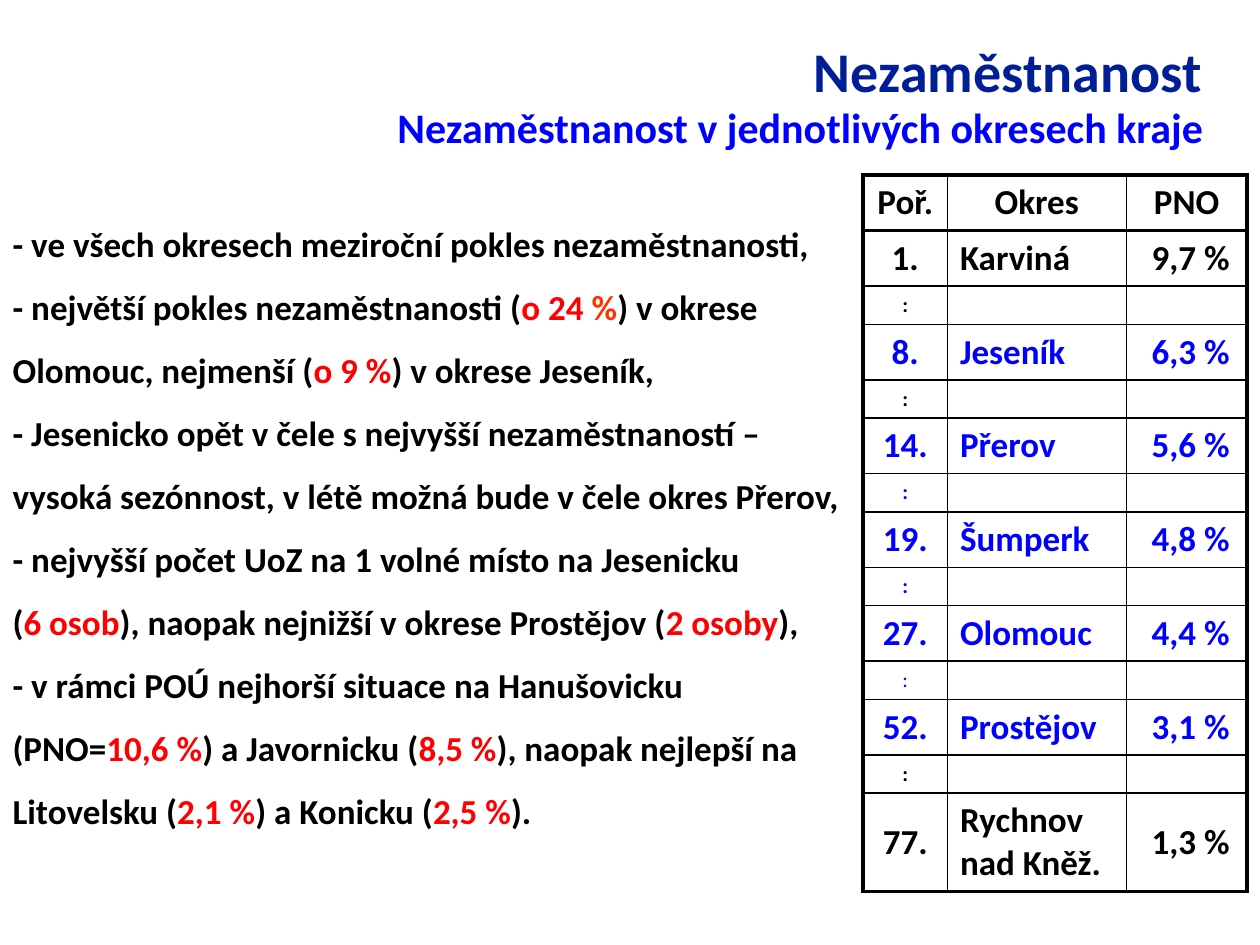
"""Build the slide on unemployment by district."""
import dataclasses

import lxml.etree
import pptx
import pptx.dml.color
import pptx.enum.text
import pptx.oxml.ns
import pptx.util

Pt = pptx.util.Pt
Align = pptx.enum.text.PP_ALIGN
Anchor = pptx.enum.text.MSO_ANCHOR


@dataclasses.dataclass(frozen=True)
class Theme:
    font: str = "Calibri"
    navy: str = "001E96"
    blue: str = "0000FF"
    black: str = "000000"
    red: str = "FF0000"
    warm: str = "FF3300"
    title: int = 32
    lead: int = 24
    body: int = 20
    small: int = 12
    thick: float = 2.25
    thin: float = 1


THEME = Theme()
RED = THEME.red

POINTS = [
    ["- ve všech okresech meziroční pokles nezaměstnanosti,"],
    ["- největší pokles nezaměstnanosti (", ("o 24", RED), (" %", THEME.warm),
     ") v okrese Olomouc, nejmenší (", ("o 9 %", RED), ") v okrese Jeseník,"],
    ["- Jesenicko opět v čele s nejvyšší nezaměstnaností – vysoká sezónnost, "
     "v létě možná bude v čele okres Přerov,"],
    ["- nejvyšší počet UoZ na 1 volné místo na Jesenicku\v(", ("6 osob", RED),
     "), naopak nejnižší v okrese Prostějov (", ("2 osoby", RED), "),"],
    ["- v rámci POÚ nejhorší situace na Hanušovicku (PNO=", ("10,6 %", RED),
     ") a Javornicku (", ("8,5 %", RED), "), naopak nejlepší na Litovelsku (",
     ("2,1 %", RED), ") a Konicku (", ("2,5 %", RED), ")."],
]

GAP = (":", "", "")
ROWS = [
    (("Poř.", "Okres", "PNO"), THEME.black),
    (("1.", "Karviná", " 9,7 %"), THEME.black),
    (GAP, THEME.black),
    (("8.", "Jeseník", " 6,3 %"), THEME.blue),
    (GAP, THEME.black),
    (("14.", "Přerov", " 5,6 %"), THEME.blue),
    (GAP, THEME.blue),
    (("19.", "Šumperk", " 4,8 %"), THEME.blue),
    (GAP, THEME.blue),
    (("27.", "Olomouc", " 4,4 %"), THEME.blue),
    (GAP, THEME.blue),
    (("52.", "Prostějov", " 3,1 %"), THEME.blue),
    (GAP, THEME.black),
    (("77.", "Rychnov\nnad Kněž.", " 1,3 %"), THEME.black),
]
LIGHT = 10
WIDTHS = (48.2, 102.2, 69.1)


def write(frame, text, size=THEME.body, color=THEME.black, bold=True,
          align=Align.LEFT, space=1.0):
    """Fill a text frame with a string or with lists of coloured runs."""
    paras = [[line] for line in text.split("\n")] if isinstance(text, str) else text
    for i, parts in enumerate(paras):
        para = frame.paragraphs[0] if i == 0 else frame.add_paragraph()
        para.alignment = align
        para.line_spacing = space
        para.space_before = Pt(0)
        for part in parts:
            words, tint = (part, color) if isinstance(part, str) else part
            for j, piece in enumerate(words.split("\v")):
                if j:
                    para.add_line_break()
                if piece:
                    run = para.add_run()
                    run.text = piece
                    style(run.font, size, tint, bold)
        if not any(parts):
            para._p.get_or_add_endParaRPr().set("sz", str(size * 100))


def style(font, size, color, bold):
    """Set the face, size, colour and weight of a font."""
    font.name = THEME.font
    font.size = Pt(size)
    font.bold = bold
    font.color.rgb = pptx.dml.color.RGBColor.from_string(color)


def place(shape, left, top, width, height):
    """Move a text shape and give it a plain frame."""
    shape.left, shape.top = Pt(left), Pt(top)
    shape.width, shape.height = Pt(width), Pt(height)
    frame = shape.text_frame
    frame.word_wrap = True
    frame.auto_size = pptx.enum.text.MSO_AUTO_SIZE.NONE
    frame.vertical_anchor = Anchor.TOP
    return frame


def plain(frame):
    """Take bullets and indents off all paragraphs."""
    for para in frame.paragraphs:
        props = para._p.get_or_add_pPr()
        props.set("marL", "0")
        props.set("indent", "0")
        lxml.etree.SubElement(props, pptx.oxml.ns.qn("a:buNone"))


def edge(cell, sides):
    """Draw the borders of a cell from a map of side to line width."""
    props = cell._tc.get_or_add_tcPr()
    for side, width in sides.items():
        line = lxml.etree.SubElement(
            props, pptx.oxml.ns.qn(f"a:ln{side}"), w=str(Pt(width)))
        fill = lxml.etree.SubElement(line, pptx.oxml.ns.qn("a:solidFill"))
        lxml.etree.SubElement(fill, pptx.oxml.ns.qn("a:srgbClr"), val=THEME.black)


def rank(slide):
    """Add the table of ranked districts."""
    last, end = len(ROWS) - 1, len(WIDTHS) - 1
    grid = slide.shapes.add_table(
        len(ROWS), len(WIDTHS), Pt(493.2), Pt(100), Pt(sum(WIDTHS)), Pt(403)).table
    grid.first_row = grid.horz_banding = False
    for col, width in zip(grid.columns, WIDTHS):
        col.width = Pt(width)
    for r, (words, color) in enumerate(ROWS):
        gap = words == GAP
        grid.rows[r].height = Pt(55.4 if r == last else 21.6 if gap else 31)
        for c, word in enumerate(words):
            cell = grid.cell(r, c)
            heavy = {"L": c == 0, "R": c == end, "T": r < 2, "B": r in (0, last)}
            edge(cell, {side: THEME.thick if on else THEME.thin
                        for side, on in heavy.items()})
            cell.fill.background()
            cell.vertical_anchor = Anchor.MIDDLE
            write(cell.text_frame, word, color=color, bold=r != LIGHT,
                  size=THEME.small if gap else THEME.body,
                  align=Align.LEFT if c == 1 and r else Align.CENTER)


def main():
    """Build and save the slide."""
    deck = pptx.Presentation()
    deck.slide_width, deck.slide_height = Pt(720), Pt(540)
    slide = deck.slides.add_slide(deck.slide_layouts[1])
    head = place(slide.shapes.title, 172.8, 15, 521.3, 57)
    head.margin_top = Pt(6)
    write(head, "Nezaměstnanost", size=THEME.title, color=THEME.navy,
          align=Align.RIGHT)
    lead = place(slide.shapes.add_textbox(0, 0, 0, 0), 147.6, 54.7, 547.2, 45.4)
    write(lead, "Nezaměstnanost v jednotlivých okresech kraje",
          size=THEME.lead, color=THEME.blue, align=Align.RIGHT)
    body = place(slide.placeholders[1], 0, 111.6, 490.3, 403)
    write(body, POINTS, space=1.5)
    plain(body)
    rank(slide)
    deck.save("out.pptx")


if __name__ == "__main__":
    main()
